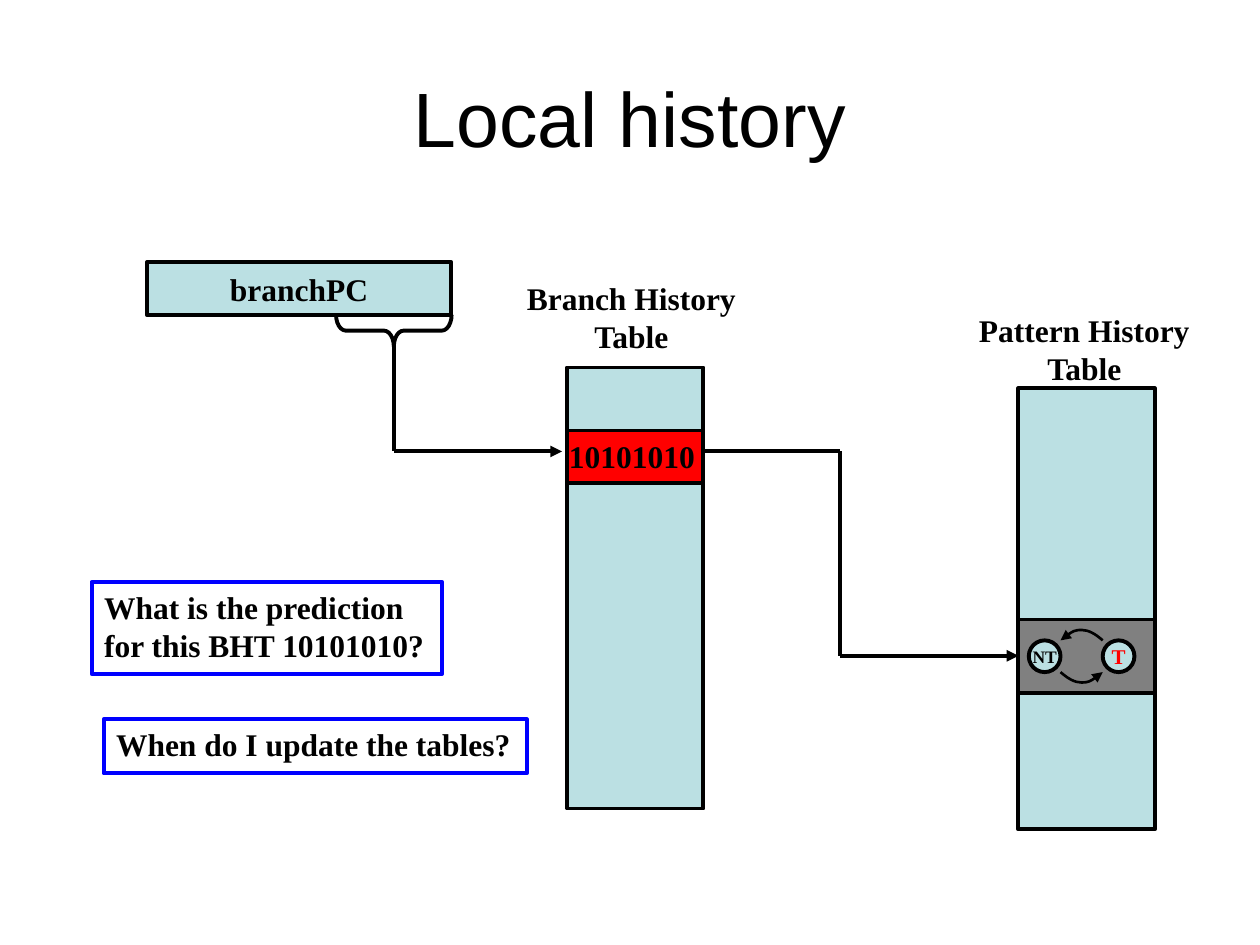
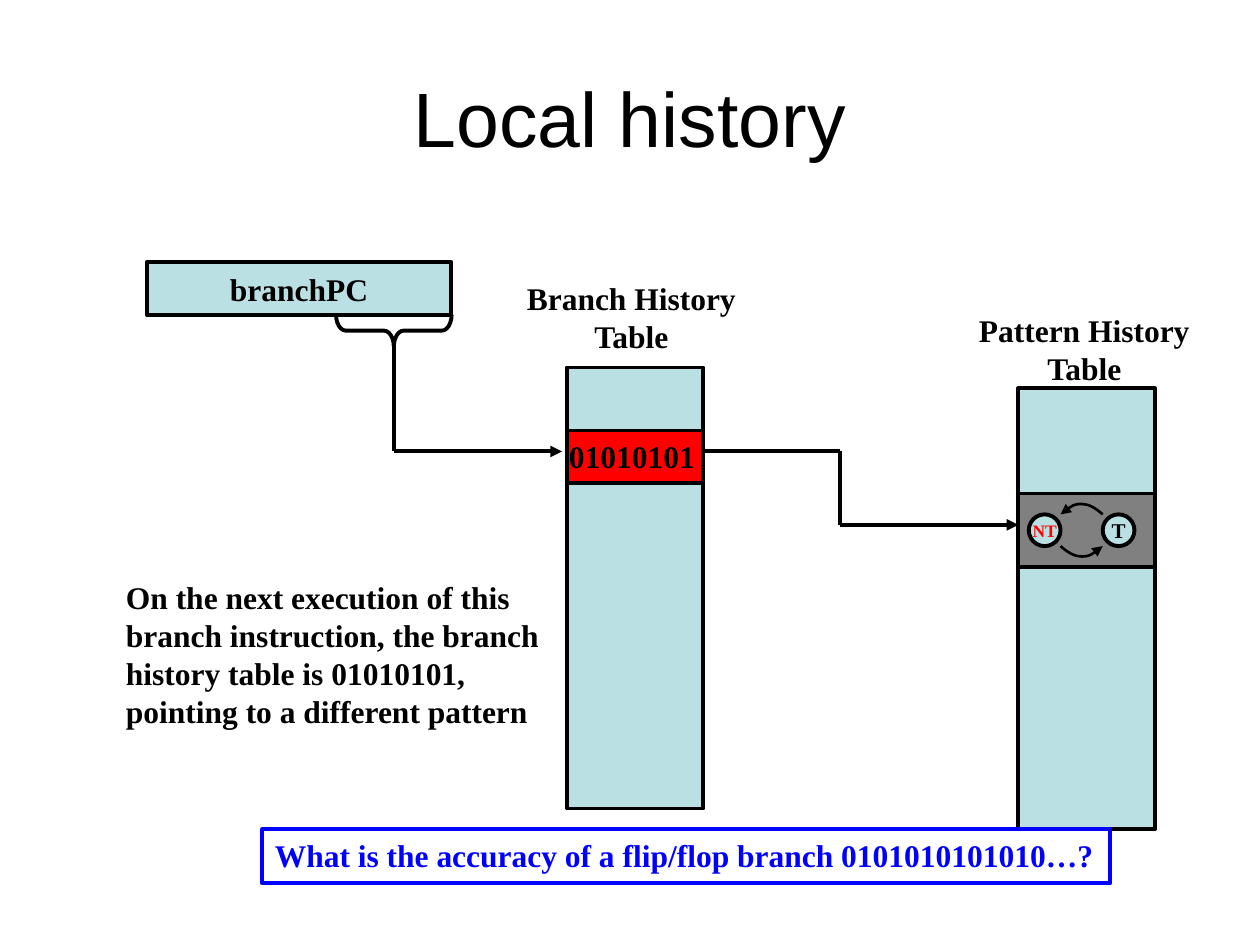
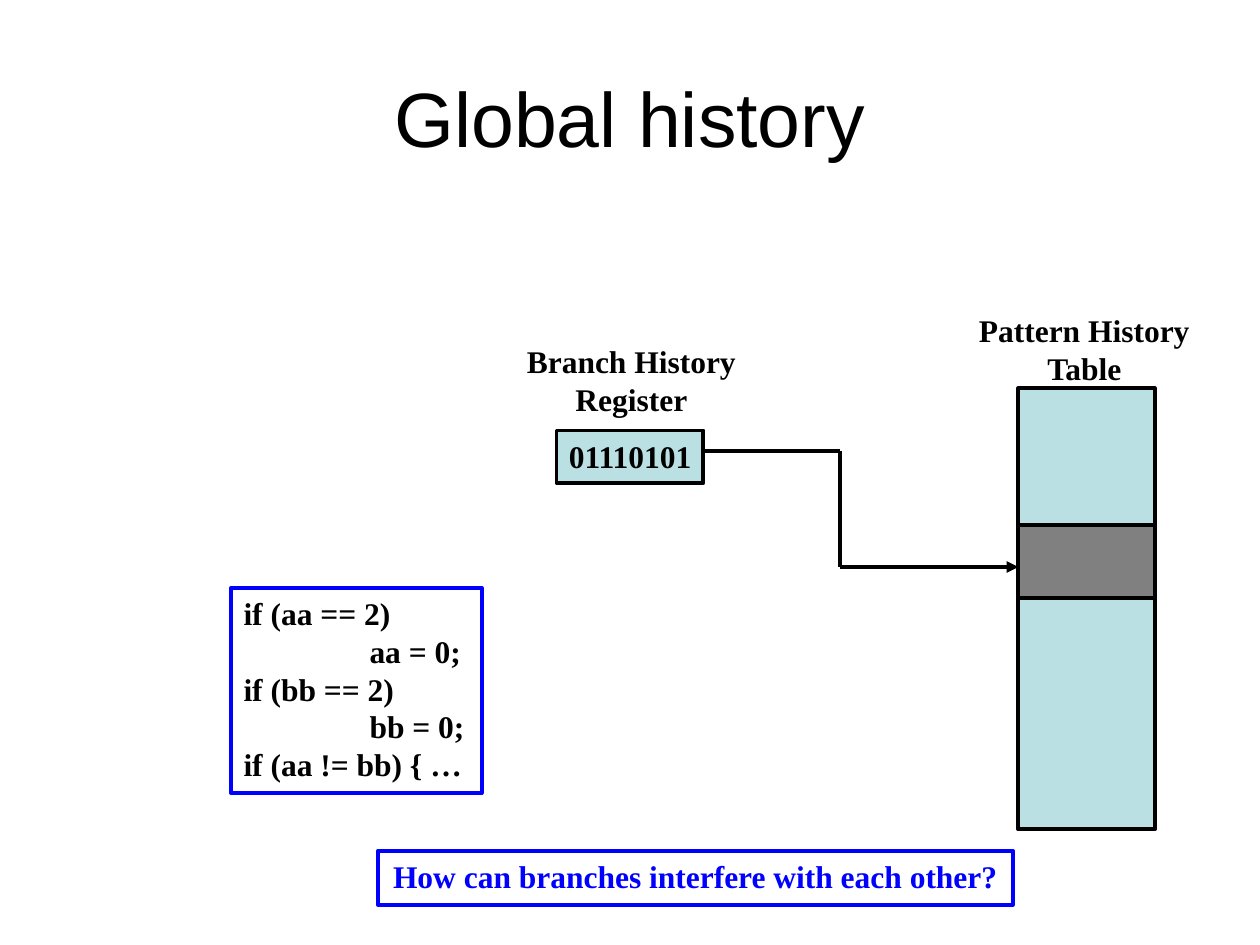
from dataclasses import dataclass

from pptx import Presentation
from pptx.dml.color import RGBColor
from pptx.enum.shapes import MSO_CONNECTOR, MSO_SHAPE
from pptx.enum.text import MSO_ANCHOR, MSO_AUTO_SIZE, PP_ALIGN
from pptx.oxml.ns import qn
from pptx.presentation import Presentation as Deck
from pptx.slide import Slide
from pptx.util import Cm, Pt

RECTANGLE = MSO_SHAPE.RECTANGLE
OVAL = MSO_SHAPE.OVAL
LEFT_BRACE = MSO_SHAPE.LEFT_BRACE
STRAIGHT = MSO_CONNECTOR.STRAIGHT
LEFT = PP_ALIGN.LEFT
CENTER = PP_ALIGN.CENTER
TOP = MSO_ANCHOR.TOP
MIDDLE = MSO_ANCHOR.MIDDLE
FIT_TEXT = MSO_AUTO_SIZE.SHAPE_TO_FIT_TEXT

BLACK = "000000"
BLUE = "0000FF"
RED = "FF0000"
GREY = "808080"
PALE = "BBE0E3"
TITLE_FONT = "Arial"
BODY_FONT = "Times New Roman"
LINE_WIDTH = 2.25
ARC_WIDTH = 1.5

TITLE_LAYOUT = 5
TABLE_WIDTH, TABLE_HEIGHT = 2.75, 8.89
HISTORY_LEFT, HISTORY_TOP = 11.43, 7.41
PATTERN_LEFT, PATTERN_TOP = 20.53, 7.83
ENTRY_TOP, ENTRY_HEIGHT = 8.68, 1.06
PATTERN_HEIGHT = 1.48
WIRE_TOP = 9.1
STATE_SIZE = 0.64
NOT_TAKEN_LEFT, TAKEN_LEFT = 20.74, 22.23
ARC_RUN, ARC_RISE = 0.85, 0.21
CODE_INDENT = 2.54


@dataclass
class Block:
    left: float
    top: float
    width: float
    height: float
    fill: str | None = PALE
    line: str = BLACK
    kind: MSO_SHAPE = RECTANGLE


@dataclass
class Label:
    left: float
    top: float
    width: float
    height: float
    text: str
    color: str = BLACK
    align: PP_ALIGN = LEFT
    frame: str | None = None


def rgb(color: str) -> RGBColor:
    return RGBColor.from_string(color)


def style_line(line, color: str = BLACK, width: float = LINE_WIDTH, arrow: bool = False) -> None:
    line.color.rgb = rgb(color)
    line.width = Pt(width)
    if arrow:
        outline = line._get_or_add_ln()
        outline.append(outline.makeelement(qn("a:tailEnd"), {"type": "triangle"}))


def write(text_frame, text: str, size: float, color: str = BLACK, align: PP_ALIGN = CENTER,
          font: str = BODY_FONT, bold: bool = True) -> None:
    text_frame.text = text
    for paragraph in text_frame.paragraphs:
        paragraph.alignment = align
        for run in paragraph.runs:
            run.font.name = font
            run.font.size = Pt(size)
            run.font.bold = bold
            run.font.color.rgb = rgb(color)


def add_block(slide: Slide, block: Block, text: str = "", size: float = 18, color: str = BLACK):
    shape = slide.shapes.add_shape(block.kind, Cm(block.left), Cm(block.top),
                                   Cm(block.width), Cm(block.height))
    shape.shadow.inherit = False
    if block.fill:
        shape.fill.solid()
        shape.fill.fore_color.rgb = rgb(block.fill)
    else:
        shape.fill.background()
    style_line(shape.line, block.line)
    if text:
        shape.text_frame.word_wrap = False
        shape.text_frame.vertical_anchor = MIDDLE
        write(shape.text_frame, text, size, color)
    return shape


def add_label(slide: Slide, label: Label):
    if label.frame:
        shape = add_block(slide, Block(label.left, label.top, label.width, label.height,
                                       None, label.frame))
    else:
        shape = slide.shapes.add_textbox(Cm(label.left), Cm(label.top),
                                         Cm(label.width), Cm(label.height))
    text_frame = shape.text_frame
    text_frame.word_wrap = False
    text_frame.auto_size = FIT_TEXT
    text_frame.vertical_anchor = TOP
    write(text_frame, label.text, 18, label.color, label.align)
    return shape


def add_wire(slide: Slide, points: list[tuple[float, float]]) -> None:
    last = len(points) - 2
    for index, (start, end) in enumerate(zip(points, points[1:])):
        connector = slide.shapes.add_connector(STRAIGHT, Cm(start[0]), Cm(start[1]),
                                               Cm(end[0]), Cm(end[1]))
        style_line(connector.line, arrow=index == last)
        properties = connector._element.spPr
        properties.append(properties.makeelement(qn("a:effectLst"), {}))


def add_arc(slide: Slide, left: float, top: float, run: float, rise: float) -> None:
    builder = slide.shapes.build_freeform(Cm(left), Cm(top))
    builder.add_line_segments([(Cm(left + run / 2), Cm(top + rise)), (Cm(left + run), Cm(top))],
                              close=False)
    arc = builder.convert_to_shape()
    arc.shadow.inherit = False
    arc.fill.background()
    style_line(arc.line, width=ARC_WIDTH, arrow=True)
    outline = next(arc._element.iter(qn("a:path")))
    for segment in outline.findall(qn("a:lnTo")):
        outline.remove(segment)
    for curve in (((0.17, 0.6), (0.33, 1), (0.5, 1)), ((0.67, 1), (0.83, 0.6), (1, 0))):
        bezier = outline.makeelement(qn("a:cubicBezTo"), {})
        for across, down in curve:
            x = Cm(across * run - min(run, 0))
            y = Cm(down * rise - min(rise, 0))
            bezier.append(bezier.makeelement(qn("a:pt"), {"x": str(x), "y": str(y)}))
        outline.append(bezier)


def add_titled_slide(presentation: Deck, text: str) -> Slide:
    slide = presentation.slides.add_slide(presentation.slide_layouts[TITLE_LAYOUT])
    title = slide.shapes.title
    title.left, title.top, title.width, title.height = Cm(1.27), Cm(0.76), Cm(22.86), Cm(3.18)
    title.text_frame.vertical_anchor = MIDDLE
    write(title.text_frame, text, 44, font=TITLE_FONT, bold=False)
    return slide


def add_pattern_table(slide: Slide, row_top: float, wire_end: float) -> None:
    add_block(slide, Block(PATTERN_LEFT, PATTERN_TOP, TABLE_WIDTH, TABLE_HEIGHT))
    add_block(slide, Block(PATTERN_LEFT, row_top, TABLE_WIDTH, PATTERN_HEIGHT, GREY))
    add_wire(slide, [(14.18, WIRE_TOP), (16.93, WIRE_TOP), (16.93, wire_end),
                     (PATTERN_LEFT, wire_end)])
    add_label(slide, Label(19.47, 6.14, 4.78, 1.78, "Pattern History\nTable", align=CENTER))


def add_states(slide: Slide, row_top: float, taken: bool) -> None:
    states = ((NOT_TAKEN_LEFT, "NT", 10, not taken), (TAKEN_LEFT, "T", 12, taken))
    for left, name, size, current in states:
        block = Block(left, row_top + 0.42, STATE_SIZE, STATE_SIZE, kind=OVAL)
        add_block(slide, block, name, size, RED if current else BLACK)
    add_arc(slide, TAKEN_LEFT - ARC_RUN, row_top + 1.06, ARC_RUN, ARC_RISE)
    add_arc(slide, TAKEN_LEFT, row_top + 0.42, -ARC_RUN, -ARC_RISE)


def add_history(slide: Slide, bits: str, name: str, name_top: float) -> None:
    add_label(slide, Label(11.22, ENTRY_TOP, 3.05, 1.02, bits))
    add_label(slide, Label(10.37, name_top, 4.72, 1.78, f"Branch History\n{name}", align=CENTER))


def add_local_history(presentation: Deck, bits: str, row_top: float, wire_end: float,
                      taken: bool, labels: list[Label]) -> None:
    slide = add_titled_slide(presentation, "Local history")
    add_block(slide, Block(2.96, 5.29, 6.14, 1.06), "branchPC")
    brace = add_block(slide, Block(7.62, 5.5, 0.64, 2.33, None, kind=LEFT_BRACE))
    brace.rotation = 270
    brace.adjustments[0] = 0.31
    add_wire(slide, [(7.94, 6.96), (7.94, WIRE_TOP), (11.33, WIRE_TOP)])
    add_block(slide, Block(HISTORY_LEFT, HISTORY_TOP, TABLE_WIDTH, TABLE_HEIGHT))
    add_block(slide, Block(HISTORY_LEFT, ENTRY_TOP, TABLE_WIDTH, ENTRY_HEIGHT, RED))
    add_pattern_table(slide, row_top, wire_end)
    add_states(slide, row_top, taken)
    add_history(slide, bits, "Table", 5.5)
    for label in labels:
        add_label(slide, label)


def add_global_history(presentation: Deck) -> None:
    slide = add_titled_slide(presentation, "Global history")
    add_block(slide, Block(11.22, ENTRY_TOP, 2.96, ENTRY_HEIGHT))
    add_pattern_table(slide, 10.58, 11.43)
    add_history(slide, "01110101", "Register", 6.77)
    code = add_label(slide, Label(
        4.66, 11.85, 5.05, 4.14,
        "if (aa == 2)\naa = 0;\nif (bb == 2)\nbb = 0;\nif (aa != bb) { …", frame=BLUE))
    for paragraph in code.text_frame.paragraphs[1::2]:
        paragraph._p.get_or_add_pPr().set("marL", str(Cm(CODE_INDENT)))
    add_label(slide, Label(7.62, 17.15, 12.8, 1.09, "How can branches interfere with each other?",
                           BLUE, CENTER, BLUE))


def main() -> None:
    presentation = Presentation()
    presentation.slide_width, presentation.slide_height = Cm(25.4), Cm(19.05)
    add_local_history(presentation, "10101010", 12.49, 13.22, True, [
        Label(1.85, 11.73, 7.06, 1.86, "What is the prediction\nfor this BHT 10101010?",
              frame=BLUE),
        Label(2.09, 14.5, 8.53, 1.09, "When do I update the tables?", frame=BLUE),
    ])
    add_local_history(presentation, "01010101", 9.95, 10.58, False, [
        Label(2.29, 11.53, 8.84, 3.3,
              "On the next execution of this\nbranch instruction, the branch\n"
              "history table is 01010101,\npointing to a different pattern"),
        Label(5.29, 16.72, 17.09, 1.09,
              "What is the accuracy of a flip/flop branch 0101010101010…?", BLUE, frame=BLUE),
    ])
    add_global_history(presentation)
    presentation.save("out.pptx")


if __name__ == "__main__":
    main()
